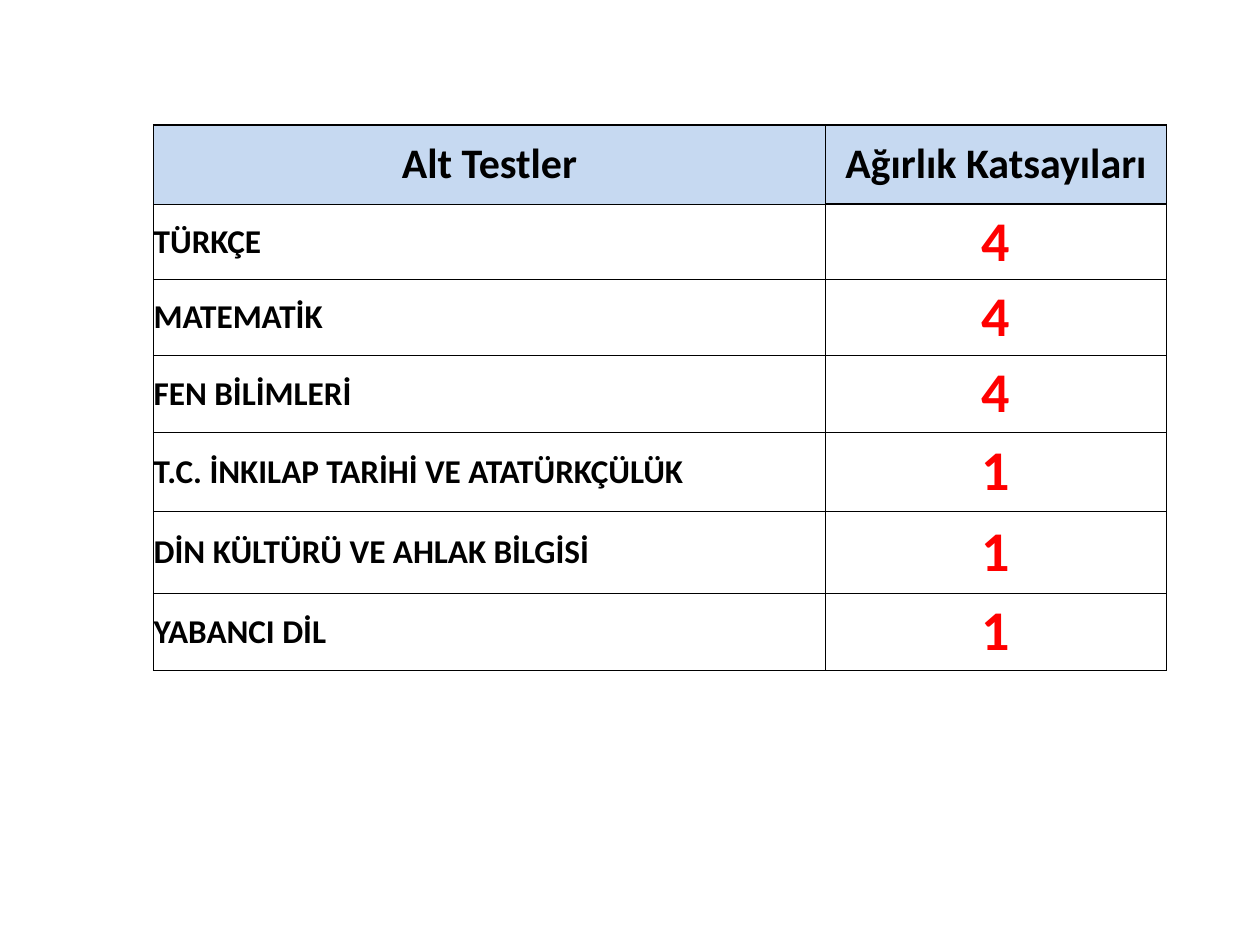
from lxml import etree
from pptx import Presentation
from pptx.dml.color import RGBColor
from pptx.enum.text import MSO_ANCHOR, PP_ALIGN
from pptx.oxml.ns import qn
from pptx.util import Inches, Pt

LEFT, CENTER = PP_ALIGN.LEFT, PP_ALIGN.CENTER
MIDDLE = MSO_ANCHOR.MIDDLE
BLACK, RED, HEADER_FILL = "000000", "FF0000", "C6D9F1"
THIN, THICK = 0.5, 1

# Content
HEADER = ("Alt Testler", "Ağırlık Katsayıları")
TESTS = [
    ("TÜRKÇE", 4),
    ("MATEMATİK", 4),
    ("FEN BİLİMLERİ", 4),
    ("T.C. İNKILAP TARİHİ VE ATATÜRKÇÜLÜK", 1),
    ("DİN KÜLTÜRÜ VE AHLAK BİLGİSİ", 1),
    ("YABANCI DİL", 1),
]
COL_WIDTHS = (5.33, 2.71)
ROW_HEIGHTS = (0.63, 0.6, 0.6, 0.61, 0.63, 0.65, 0.61)


def rgb(value):
    return RGBColor.from_string(value)


def set_borders(cell, **widths):
    tcPr = cell._tc.get_or_add_tcPr()
    for side in "LRTB":
        ln = etree.SubElement(tcPr, qn(f"a:ln{side}"), w=str(Pt(widths[side])))
        fill = etree.SubElement(ln, qn("a:solidFill"))
        etree.SubElement(fill, qn("a:srgbClr"), val=BLACK)


def write_cell(cell, text, size, color=BLACK, align=LEFT, fill=None):
    cell.margin_left = cell.margin_right = 0
    cell.margin_top = cell.margin_bottom = 0
    cell.vertical_anchor = MIDDLE
    if fill:
        cell.fill.solid()
        cell.fill.fore_color.rgb = rgb(fill)
    else:
        cell.fill.background()
    p = cell.text_frame.paragraphs[0]
    p.alignment = align
    r = p.add_run()
    r.text = str(text)
    r.font.name = "Calibri"
    r.font.size = Pt(size)
    r.font.bold = True
    r.font.color.rgb = rgb(color)


prs = Presentation()
prs.slide_width, prs.slide_height = Inches(10), Inches(7.5)
s = prs.slides.add_slide(prs.slide_layouts[6])

# Table grid
table = s.shapes.add_table(
    len(ROW_HEIGHTS), len(COL_WIDTHS), Inches(1.22), Inches(0.99),
    Inches(sum(COL_WIDTHS)), Inches(sum(ROW_HEIGHTS))).table
table.first_row = table.horz_banding = False
for col, width in zip(table.columns, COL_WIDTHS):
    col.width = Inches(width)
for row, height in zip(table.rows, ROW_HEIGHTS):
    row.height = Inches(height)

# Borders: heavier around the header and the outer edge
last = len(TESTS)
for i in range(last + 1):
    set_borders(table.cell(i, 0), L=THICK, R=THIN,
                T=THICK if i == 0 else THIN, B=THIN)
    set_borders(table.cell(i, 1), L=THIN, R=THICK,
                T=THICK if i <= 1 else THIN,
                B=THICK if i in (0, last) else THIN)

# Text
for j, title in enumerate(HEADER):
    write_cell(table.cell(0, j), title, 24, align=CENTER, fill=HEADER_FILL)
for i, (test, weight) in enumerate(TESTS, 1):
    write_cell(table.cell(i, 0), test, 19)
    write_cell(table.cell(i, 1), weight, 32, color=RED, align=CENTER)

prs.save("out.pptx")
